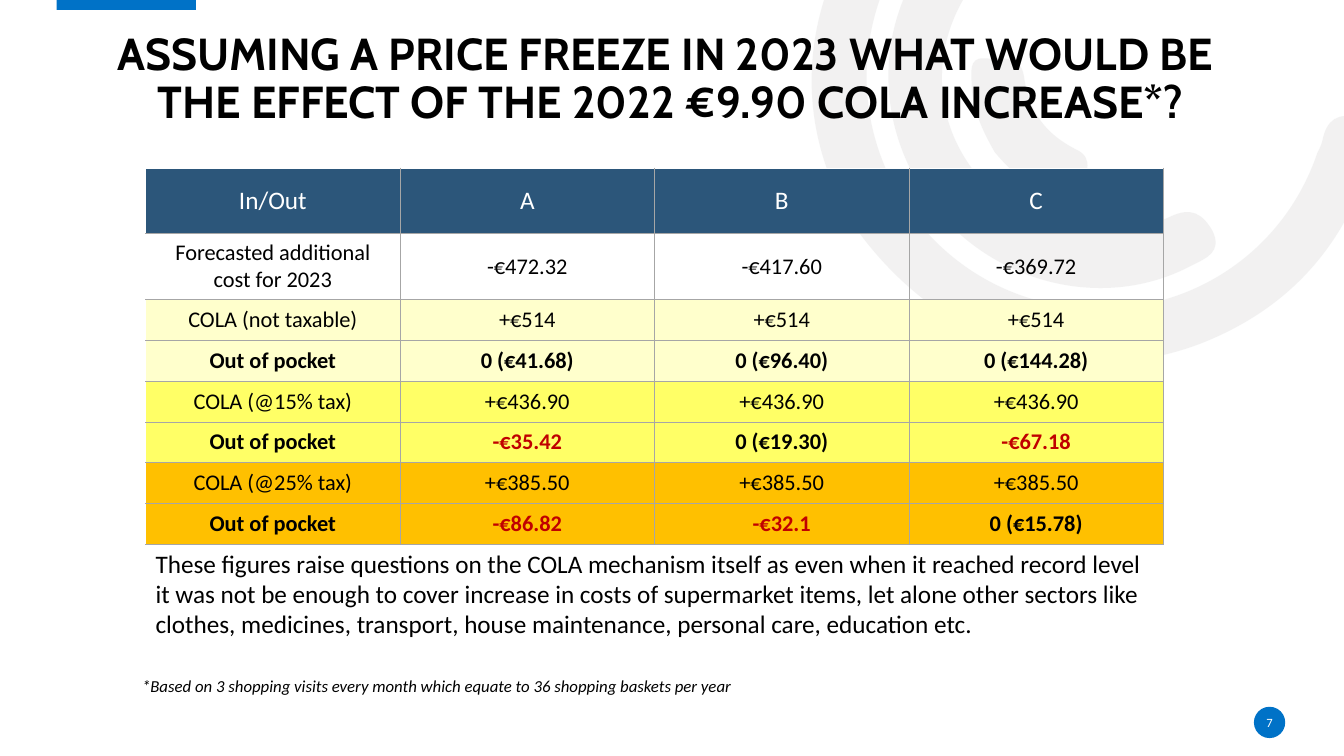
from dataclasses import dataclass

from lxml import etree
from pptx import Presentation
from pptx.dml.color import RGBColor
from pptx.enum import shapes as shp, text as txt
from pptx.oxml import ns
from pptx.util import Cm, Pt


@dataclass(frozen=True)
class Theme:
    head: str = "Cabin"
    body: str = "Calibri"
    black: str = "000000"
    white: str = "FFFFFF"
    red: str = "C00000"
    blue: str = "0072C7"
    navy: str = "2C567A"
    swirl: str = "E7E6E6"
    rule: str = "A6A6A6"
    cream: str = "FFFFCC"
    yellow: str = "FFFF66"
    amber: str = "FFC000"
    title: int = 32
    large: int = 18
    cell: int = 16
    note: int = 12
    num: int = 9


T = Theme()
INCH = 2.54

# Each arc: start point, then cubic curves (two handles and an end), in inches
ARCS = [
    ((8.51, 2.29), [
        (7.99, 1.49, 7.87, 0.5, 8.38, -0.5), (8.9, -1.52, 9.76, -2.03, 10.9, -2.07),
        (11.05, -2.07, 11.21, -2.1, 11.31, -1.95), (11.44, -1.75, 11.27, -1.54, 10.98, -1.54),
        (9.67, -1.54, 8.65, -0.59, 8.6, 0.68), (8.56, 1.81, 9.36, 2.81, 10.46, 3.02),
        (11.6, 3.24, 12.7, 2.61, 13.07, 1.52), (13.09, 1.48, 13.11, 1.44, 13.12, 1.4),
        (13.16, 1.19, 13.27, 1.11, 13.49, 1.17), (13.73, 1.24, 13.67, 1.41, 13.61, 1.56),
        (13.34, 2.45, 12.78, 3.07, 11.91, 3.41), (10.7, 3.87, 9.36, 3.45, 8.51, 2.29)]),
    ((9.22, 1.99), [
        (8.62, 1.15, 8.69, 0.07, 9.4, -0.68), (9.51, -0.79, 9.62, -0.95, 9.8, -0.78),
        (9.95, -0.64, 9.97, -0.5, 9.79, -0.32), (9.25, 0.26, 9.2, 1.08, 9.65, 1.68),
        (10.08, 2.29, 10.88, 2.49, 11.61, 2.15), (11.82, 2.05, 11.93, 2.12, 12.03, 2.29),
        (12.13, 2.5, 11.97, 2.56, 11.83, 2.63), (10.96, 3.1, 9.83, 2.82, 9.22, 1.99)]),
    ((9.87, 1.51), [
        (9.75, 1.3, 9.64, 1.07, 9.64, 0.82), (9.64, 0.73, 9.61, 0.57, 9.76, 0.58),
        (9.92, 0.59, 10.13, 0.53, 10.16, 0.76), (10.21, 1.1, 10.36, 1.32, 10.67, 1.48),
        (10.88, 1.57, 10.76, 1.76, 10.72, 1.89), (10.68, 2.06, 10.55, 1.98, 10.45, 1.94),
        (10.21, 1.87, 10.03, 1.7, 9.87, 1.51)]),
]

ROWS = [
    (None, ["Forecasted additional cost for 2023", "-€472.32", "-€417.60", "-€369.72"]),
    (T.cream, ["COLA (not taxable)"] + ["+€514"] * 3),
    (T.cream, ["Out of pocket", "0 (€41.68)", "0 (€96.40)", "0 (€144.28)"]),
    (T.yellow, ["COLA (@15% tax)"] + ["+€436.90"] * 3),
    (T.yellow, ["Out of pocket", "-€35.42", "0 (€19.30)", "-€67.18"]),
    (T.amber, ["COLA (@25% tax)"] + ["+€385.50"] * 3),
    (T.amber, ["Out of pocket", "-€86.82", "-€32.1", "0 (€15.78)"]),
]


def rgb(hue):
    return RGBColor.from_string(hue)


def put(para, words, size, hue=T.black, face=T.body, bold=False, slant=False):
    """Add one styled run to a paragraph."""
    run = para.add_run()
    run.text = words
    font = run.font
    font.name, font.size, font.bold, font.italic = face, Pt(size), bold, slant
    font.color.rgb = rgb(hue)


def paint(shape, hue):
    shape.shadow.inherit = False
    shape.fill.solid()
    shape.fill.fore_color.rgb = rgb(hue)
    shape.line.fill.background()


def strip(frame):
    """Take away a text frame's insets."""
    frame.margin_left = frame.margin_right = frame.margin_top = frame.margin_bottom = 0


def bend(shape):
    """Join each three straight segments into one cubic curve."""
    lines = list(shape.element.iter(ns.qn("a:lnTo")))
    for i in range(0, len(lines), 3):
        curve = etree.Element(ns.qn("a:cubicBezTo"))
        lines[i].addprevious(curve)
        for line in lines[i:i + 3]:
            curve.append(line[0])
            line.getparent().remove(line)


def add_swirl(slide):
    for start, curves in ARCS:
        pen = slide.shapes.build_freeform(*(Cm(n * INCH) for n in start), scale=1.0)
        points = [(Cm(c[i] * INCH), Cm(c[i + 1] * INCH)) for c in curves for i in (0, 2, 4)]
        pen.add_line_segments(points, close=True)
        arc = pen.convert_to_shape()
        bend(arc)
        paint(arc, T.swirl)
        tint = arc.element.spPr.find(".//" + ns.qn("a:srgbClr"))
        etree.SubElement(tint, ns.qn("a:alpha"), val="53000")


def add_bar(slide, box):
    paint(slide.shapes.add_shape(shp.MSO_SHAPE.RECTANGLE, *box), T.blue)


def add_badge(slide, box, words):
    disc = slide.shapes.add_shape(shp.MSO_SHAPE.OVAL, *box)
    paint(disc, T.blue)
    frame = disc.text_frame
    strip(frame)
    frame.word_wrap = False
    frame.vertical_anchor = txt.MSO_ANCHOR.MIDDLE
    para = frame.paragraphs[0]
    para.alignment = txt.PP_ALIGN.CENTER
    put(para, words, T.num, T.white)


def set_title(slide, box, lines):
    title = slide.shapes.title
    title.element.getparent().append(title.element)  # in front of the swirl
    title.left, title.top, title.width, title.height = box
    frame = title.text_frame
    strip(frame)
    frame.word_wrap = True
    frame.auto_size = txt.MSO_AUTO_SIZE.NONE
    frame.vertical_anchor = txt.MSO_ANCHOR.BOTTOM
    para = frame.paragraphs[0]
    para.alignment = txt.PP_ALIGN.CENTER
    para.line_spacing = 0.9
    for i, line in enumerate(lines):
        if i:
            para.add_line_break()
        put(para, line, T.title, face=T.head, bold=True)


def edge(cell, first, top):
    """Rule a cell in grey, with white on the table's left and top sides."""
    props = cell._tc.get_or_add_tcPr()
    for i, side in enumerate("LRTB"):
        pale = (side == "L" and first) or (side == "T" and top)
        line = etree.Element(ns.qn("a:ln" + side), w=str(Pt(1 if pale else 0.5)))
        fill = etree.SubElement(line, ns.qn("a:solidFill"))
        etree.SubElement(fill, ns.qn("a:srgbClr"), val=T.white if pale else T.rule)
        props.insert(i, line)


def fill_cell(cell, words, back, **style):
    if back:
        cell.fill.solid()
        cell.fill.fore_color.rgb = rgb(back)
    else:
        cell.fill.background()
    cell.vertical_anchor = txt.MSO_ANCHOR.MIDDLE
    para = cell.text_frame.paragraphs[0]
    para.alignment = txt.PP_ALIGN.CENTER
    put(para, words, **style)


def add_costs(slide, box):
    rows = [(T.navy, ["In/Out", "A", "B", "C"])] + ROWS
    table = slide.shapes.add_table(len(rows), 4, *box).table
    table.first_row = table.horz_banding = False
    for r, (back, cells) in enumerate(rows):
        table.rows[r].height = Cm(1.65 if r < 2 else 1.03)
        bold = cells[0] == "Out of pocket"
        for c, words in enumerate(cells):
            hue = T.red if bold and words.startswith("-") else T.black
            style = dict(size=T.cell, hue=hue, bold=bold)
            if r == 0:
                style = dict(size=T.large, hue=T.white)
            cell = table.cell(r, c)
            fill_cell(cell, words, back, **style)
            edge(cell, c == 0, r == 0)


def add_text(slide, box, words, **style):
    frame = slide.shapes.add_textbox(*box).text_frame
    frame.word_wrap = True
    put(frame.paragraphs[0], words, **style)


def main():
    deck = Presentation()
    deck.slide_width, deck.slide_height = Cm(33.87), Cm(19.05)
    slide = deck.slides.add_slide(deck.slide_layouts[5])
    add_swirl(slide)
    add_bar(slide, (Cm(1.43), Cm(-0.05), Cm(3.51), Cm(0.3)))
    add_badge(slide, (Cm(31.6), Cm(17.81), Cm(0.79), Cm(0.79)), "7")
    set_title(slide, (Cm(1.43), Cm(0.67), Cm(30.96), Cm(2.57)),
              ["ASSUMING A PRICE FREEZE IN 2023 WHAT WOULD BE ",
               "THE EFFECT OF THE 2022 €9.90 COLA INCREASE*?"])
    add_costs(slide, (Cm(3.67), Cm(4.24), Cm(25.65), Cm(9.48)))
    add_text(slide, (Cm(3.33), Cm(16.91), Cm(19.33), Cm(1.27)),
             "*Based on 3 shopping visits every month which equate to 36 shopping baskets per year",
             size=T.note, slant=True)
    add_text(slide, (Cm(3.67), Cm(13.69), Cm(25.65), Cm(3.33)),
             "These figures raise questions on the COLA mechanism itself as even when it reached "
             "record level it was not be enough to cover increase in costs of supermarket items, "
             "let alone other sectors like clothes, medicines, transport, house maintenance, "
             "personal care, education etc.", size=T.large)
    deck.save("out.pptx")


if __name__ == "__main__":
    main()
